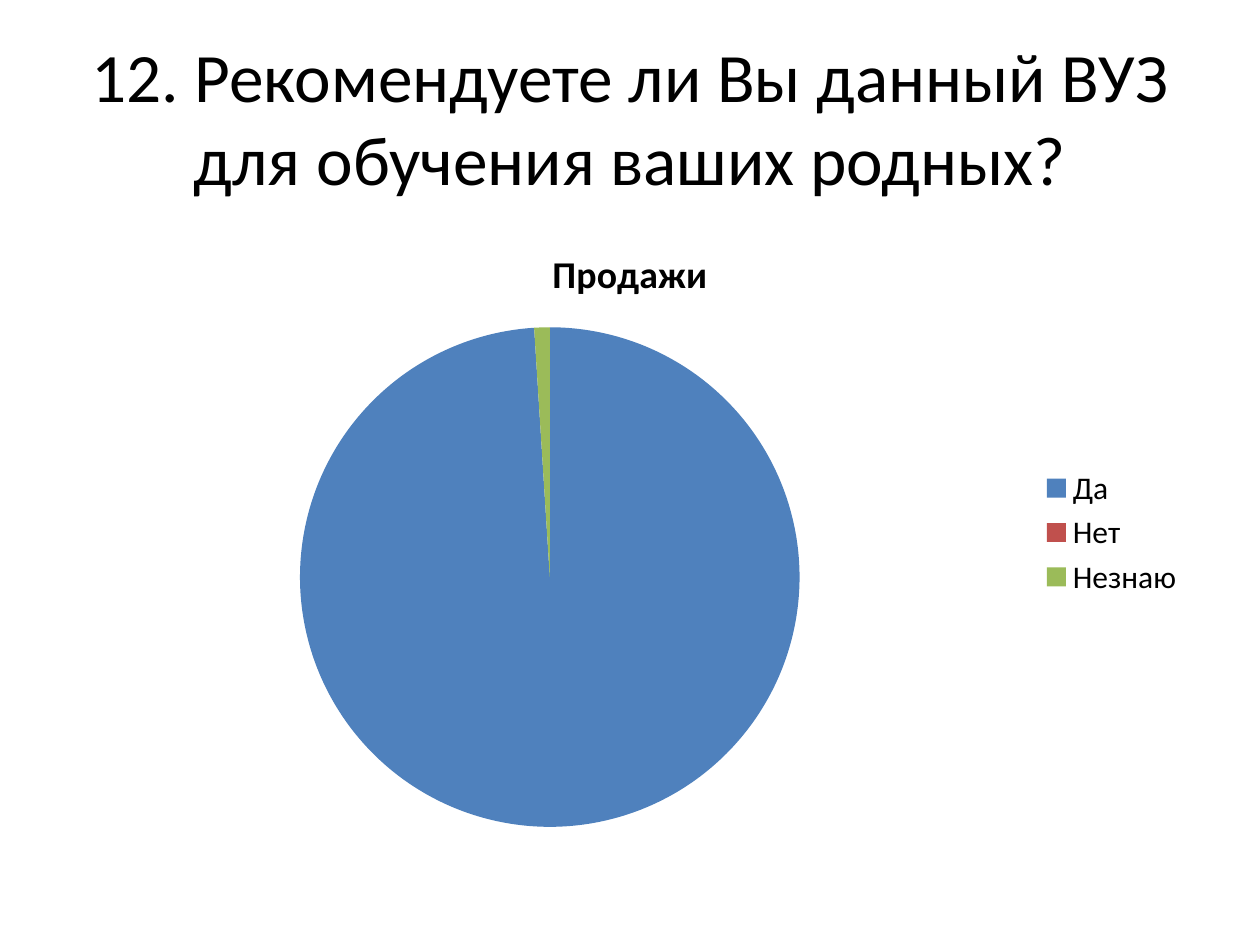
from pptx import Presentation
from pptx.chart.data import CategoryChartData as ChartData
from pptx.dml.color import RGBColor
from pptx.enum.chart import XL_CHART_TYPE as Kind, XL_LEGEND_POSITION as Place
from pptx.enum.text import MSO_ANCHOR as Anchor, PP_ALIGN as Align
from pptx.util import Cm, Pt

TITLE = "12. Рекомендуете ли Вы данный ВУЗ для обучения ваших родных?"
NAME = "Продажи"
VOTES = [("Да", 99, "4F81BD"), ("Нет", 0, "C0504D"), ("Незнаю", 1, "9BBB59")]
FONT, BLACK = "Calibri", "000000"
WIDE, HIGH, EDGE = 25.4, 19.05, 1.27


def tint(code):
    return RGBColor.from_string(code)


def style(font, size, bold=False, color=BLACK):
    font.name, font.size, font.bold = FONT, Pt(size), bold
    font.color.rgb = tint(color)


def write(frame, text, align=Align.CENTER, **look):
    para = frame.paragraphs[0]
    para.alignment = align
    run = para.add_run()
    run.text = text
    style(run.font, **look)


def add_title(slide):
    box = slide.shapes.add_textbox(Cm(EDGE), Cm(0.76), Cm(WIDE - 2 * EDGE), Cm(3.18))
    frame = box.text_frame
    frame.word_wrap = True
    frame.vertical_anchor = Anchor.MIDDLE
    write(frame, TITLE, size=39.6)


def add_pie(slide):
    names, counts, colors = zip(*VOTES)
    data = ChartData()
    data.categories = names
    data.add_series(NAME, counts)
    chart = slide.shapes.add_chart(
        Kind.PIE, Cm(EDGE), Cm(4.45), Cm(WIDE - 2 * EDGE), Cm(12.57), data
    ).chart
    style(chart.font, 18)
    chart.has_title = True
    write(chart.chart_title.text_frame, NAME, size=21.6, bold=True)
    chart.chart_title.include_in_layout = False
    chart.has_legend = True
    chart.legend.position = Place.RIGHT
    chart.legend.include_in_layout = False
    style(chart.legend.font, 18)
    plot = chart.plots[0]
    plot.vary_by_categories = True
    for i, color in enumerate(colors):
        fill = plot.series[0].points[i].format.fill
        fill.solid()
        fill.fore_color.rgb = tint(color)


def main():
    deck = Presentation()
    deck.slide_width, deck.slide_height = Cm(WIDE), Cm(HIGH)
    slide = deck.slides.add_slide(deck.slide_layouts[6])
    add_title(slide)
    add_pie(slide)
    deck.save("out.pptx")


if __name__ == "__main__":
    main()
